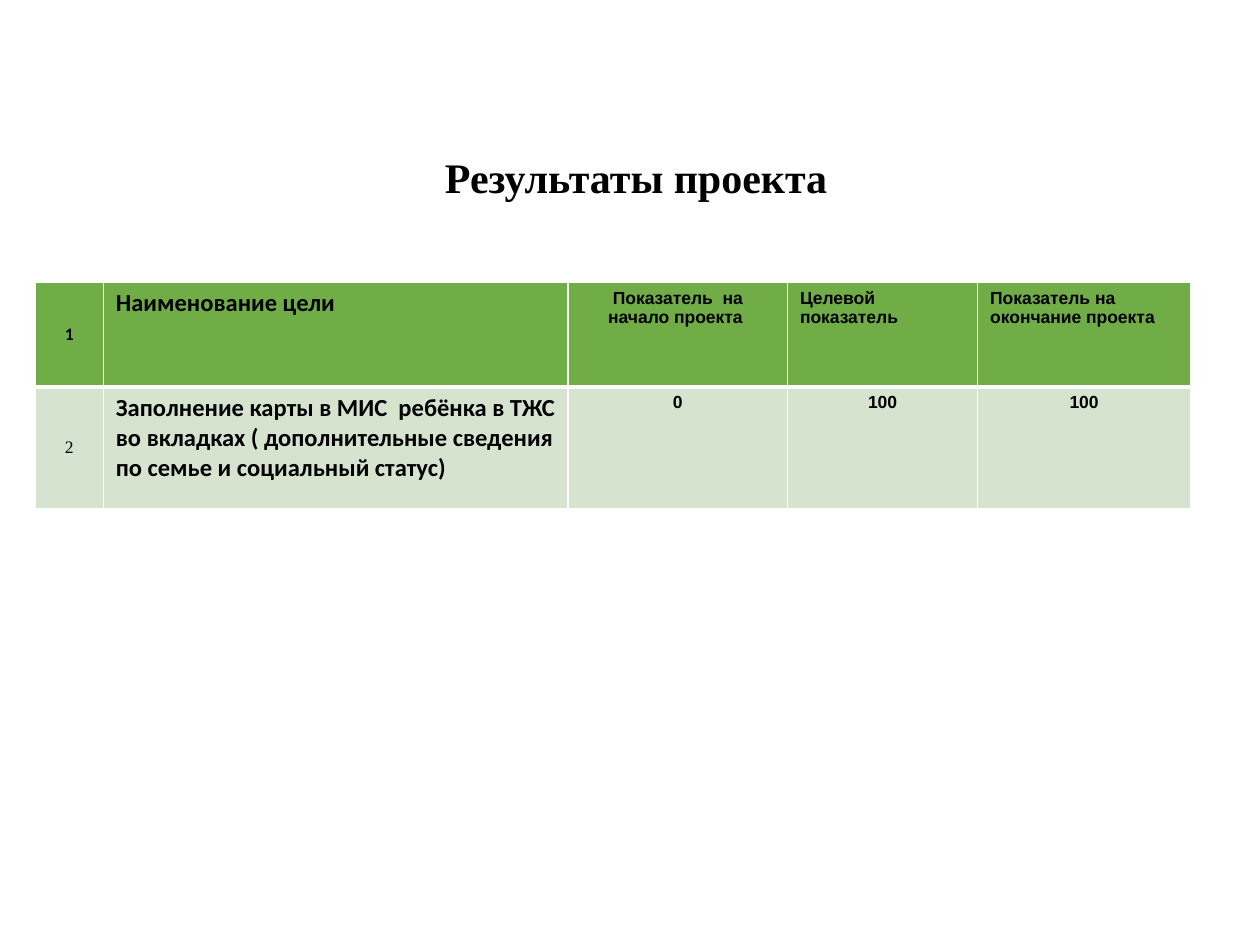
"""Build the project results slide with its table of indicators."""
from dataclasses import dataclass

from lxml import etree
from pptx import Presentation
from pptx import util as u
from pptx.dml.color import RGBColor
from pptx.enum import text
from pptx.oxml import ns

BLACK = RGBColor(0x00, 0x00, 0x00)
WHITE = RGBColor(0xFF, 0xFF, 0xFF)
GREEN = RGBColor(0x70, 0xAD, 0x47)
PALE_GREEN = RGBColor(0xD5, 0xE3, 0xCF)

COLUMN_WIDTHS = (0.54, 3.69, 1.74, 1.51, 1.69)
ROW_HEIGHTS = (0.83, 0.97)
LEFT, CENTER = text.PP_ALIGN.LEFT, text.PP_ALIGN.CENTER
TOP, MIDDLE = text.MSO_ANCHOR.TOP, text.MSO_ANCHOR.MIDDLE


@dataclass
class Entry:
    words: str
    font: str = "Arial"
    size: int = 10
    bold: bool = True
    align: text.PP_ALIGN = CENTER
    anchor: text.MSO_ANCHOR = TOP


@dataclass
class Band:
    fill: RGBColor
    borders: dict
    entries: tuple


BANDS = (
    Band(GREEN, {"L": 1, "R": 1, "T": 1, "B": 3}, (
        Entry("1", "Calibri", anchor=MIDDLE),
        Entry("Наименование цели", "Calibri", 14, align=LEFT),
        Entry("Показатель  на начало проекта "),
        Entry("Целевой показатель", align=LEFT),
        Entry("Показатель на окончание проекта", align=LEFT),
    )),
    Band(PALE_GREEN, {"L": 1, "R": 1, "T": 3, "B": 1}, (
        Entry("2", "Times New Roman", bold=False, anchor=MIDDLE),
        Entry("Заполнение карты в МИС  ребёнка в ТЖС во вкладках "
              "( дополнительные сведения по семье и социальный статус)",
              "Calibri", 14, align=LEFT),
        Entry("0"),
        Entry("100"),
        Entry("100"),
    )),
)


def set_values(target, values: dict) -> None:
    for name, value in values.items():
        setattr(target, name, value)


def add_span(para, words: str, font: str, size: int, bold: bool) -> None:
    span = para.add_run()
    span.text = words
    set_values(span.font, {"name": font, "size": u.Pt(size), "bold": bold})
    span.font.color.rgb = BLACK


def set_borders(cell, widths: dict) -> None:
    properties = cell._tc.get_or_add_tcPr()
    for position, (side, width) in enumerate(widths.items()):
        line = etree.Element(ns.qn(f"a:ln{side}"), w=str(u.Pt(width)))
        fill = etree.SubElement(line, ns.qn("a:solidFill"))
        etree.SubElement(fill, ns.qn("a:srgbClr"), val=str(WHITE))
        properties.insert(position, line)


def fill_cell(cell, entry: Entry, band: Band) -> None:
    cell.fill.solid()
    cell.fill.fore_color.rgb = band.fill
    cell.vertical_anchor = entry.anchor
    set_borders(cell, band.borders)
    para = cell.text_frame.paragraphs[0]
    para.alignment = entry.align
    add_span(para, entry.words, entry.font, entry.size, entry.bold)


def add_title(page) -> None:
    title = page.shapes.title
    set_values(title, {"left": u.Inches(0.71), "top": u.Inches(0.75),
                       "width": u.Inches(8.54), "height": u.Inches(1.18)})
    frame = title.text_frame
    set_values(frame, {"margin_left": 0, "margin_top": 0, "margin_right": 0,
                       "margin_bottom": 0, "vertical_anchor": MIDDLE,
                       "word_wrap": True, "auto_size": text.MSO_AUTO_SIZE.NONE})
    para = frame.paragraphs[0]
    set_values(para, {"alignment": CENTER, "line_spacing": 0.9})
    add_span(para, " ", "Calibri", 44, False)
    add_span(para, "Результаты проекта", "Times New Roman", 24, True)


def add_results(page) -> None:
    table = page.shapes.add_table(
        len(BANDS), len(COLUMN_WIDTHS), u.Inches(0.28), u.Inches(2.24),
        u.Inches(sum(COLUMN_WIDTHS)), u.Inches(sum(ROW_HEIGHTS))).table
    for column, width in zip(table.columns, COLUMN_WIDTHS):
        column.width = u.Inches(width)
    for row, height, band in zip(table.rows, ROW_HEIGHTS, BANDS):
        row.height = u.Inches(height)
        for cell, entry in zip(row.cells, band.entries):
            fill_cell(cell, entry, band)


def main() -> None:
    deck = Presentation()
    set_values(deck, {"slide_width": u.Inches(10), "slide_height": u.Inches(7.5)})
    page = deck.slides.add_slide(deck.slide_layouts[5])
    add_results(page)
    add_title(page)
    deck.save("out.pptx")


if __name__ == "__main__":
    main()
